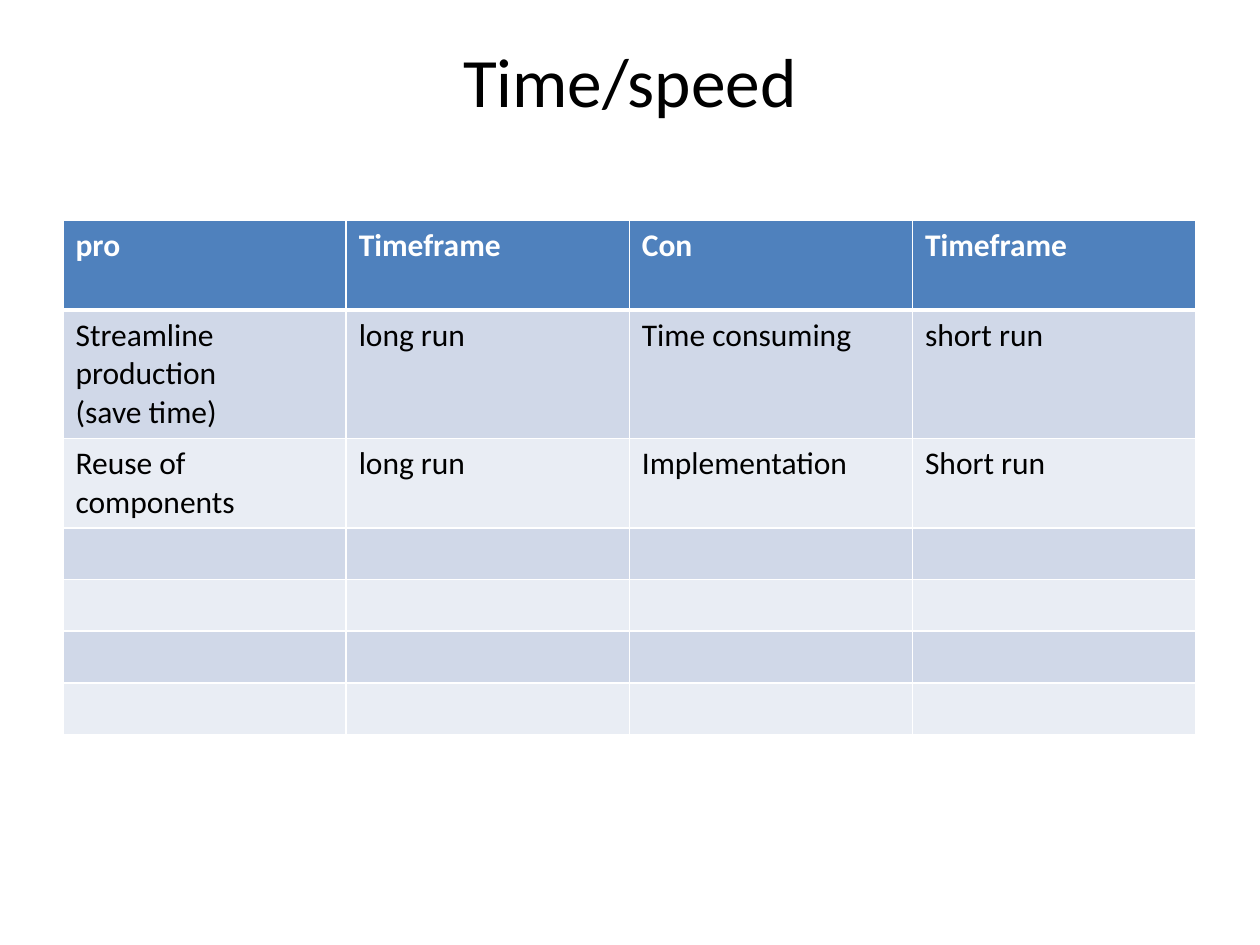
import pptx
import pptx.dml.color
import pptx.enum.text
import pptx.oxml.ns
import pptx.util
from dataclasses import dataclass
from lxml import etree
from pptx.util import Inches


@dataclass(frozen=True)
class Theme:
    """Colours and type of the slide."""
    font: str = "Calibri"
    ink: str = "000000"
    paper: str = "FFFFFF"
    header: str = "4F81BD"
    bands: tuple = ("D0D8E8", "E9EDF4")
    title_size: float = 39.6
    body_size: float = 18
    thin: float = 1
    thick: float = 3


THEME = Theme()
HEADINGS = ["pro", "Timeframe", "Con", "Timeframe"]
ARGUMENTS = [
    ["Streamline production\n(save time)", "long run", "Time consuming", "short run"],
    ["Reuse of components", "long run", "Implementation", "Short run"],
]
EMPTY_ROWS = 4
ROW_HEIGHTS = [0.71, 1.02, 0.71] + [0.41] * EMPTY_ROWS


def rgb(value):
    """Return a colour object for a hex value."""
    return pptx.dml.color.RGBColor.from_string(value)


def write_text(frame, text, size, color, bold=False, alignment=pptx.enum.text.PP_ALIGN.LEFT):
    """Fill a text frame and format each of its paragraphs."""
    frame.text = text
    formats = {"name": THEME.font, "size": pptx.util.Pt(size), "bold": bold}
    for paragraph in frame.paragraphs:
        paragraph.alignment = alignment
        for name, value in formats.items():
            setattr(paragraph.font, name, value)
        paragraph.font.color.rgb = rgb(color)


def add_border(cell, side, width):
    """Add one solid line to a side of a cell."""
    qualified = pptx.oxml.ns.qn
    properties = cell._tc.get_or_add_tcPr()
    line = etree.SubElement(properties, qualified(f"a:ln{side}"), w=str(pptx.util.Pt(width)))
    fill = etree.SubElement(line, qualified("a:solidFill"))
    etree.SubElement(fill, qualified("a:srgbClr"), val=THEME.paper)


def add_title(slide, left, top, width, height):
    """Place the centred title in its box."""
    frame = slide.shapes.add_textbox(left, top, width, height).text_frame
    settings = {
        "word_wrap": True,
        "vertical_anchor": pptx.enum.text.MSO_ANCHOR.TOP,
        "margin_top": 0,
        "margin_bottom": 0,
    }
    for name, value in settings.items():
        setattr(frame, name, value)
    write_text(frame, "Time/speed", THEME.title_size, THEME.ink,
               alignment=pptx.enum.text.PP_ALIGN.CENTER)


def style_cell(cell, row_index):
    """Give a cell its borders and its header or band fill."""
    widths = {
        "L": THEME.thin,
        "R": THEME.thin,
        "T": THEME.thick if row_index == 1 else THEME.thin,
        "B": THEME.thick if row_index == 0 else THEME.thin,
    }
    for side, width in widths.items():
        add_border(cell, side, width)
    cell.fill.solid()
    band = THEME.bands[(row_index - 1) % len(THEME.bands)]
    cell.fill.fore_color.rgb = rgb(THEME.header if row_index == 0 else band)


def add_argument_table(slide, left, top, width, height):
    """Place the table of pros and cons with their timeframes."""
    contents = [HEADINGS] + ARGUMENTS + [[""] * len(HEADINGS)] * EMPTY_ROWS
    table = slide.shapes.add_table(
        len(contents), len(HEADINGS), left, top, width, height).table
    for row_index, texts in enumerate(contents):
        table.rows[row_index].height = Inches(ROW_HEIGHTS[row_index])
        is_header = row_index == 0
        for column_index, text in enumerate(texts):
            cell = table.cell(row_index, column_index)
            style_cell(cell, row_index)
            write_text(cell.text_frame, text, THEME.body_size,
                       THEME.paper if is_header else THEME.ink, bold=is_header)


def main():
    """Build and save the slide."""
    presentation = pptx.Presentation()
    presentation.slide_width = Inches(10)
    presentation.slide_height = Inches(7.5)
    slide = presentation.slides.add_slide(presentation.slide_layouts[6])
    add_title(slide, Inches(0.5), Inches(0.3), Inches(9), Inches(1.25))
    add_argument_table(slide, Inches(0.5), Inches(1.75), Inches(8.99), Inches(sum(ROW_HEIGHTS)))
    presentation.save("out.pptx")


if __name__ == "__main__":
    main()
